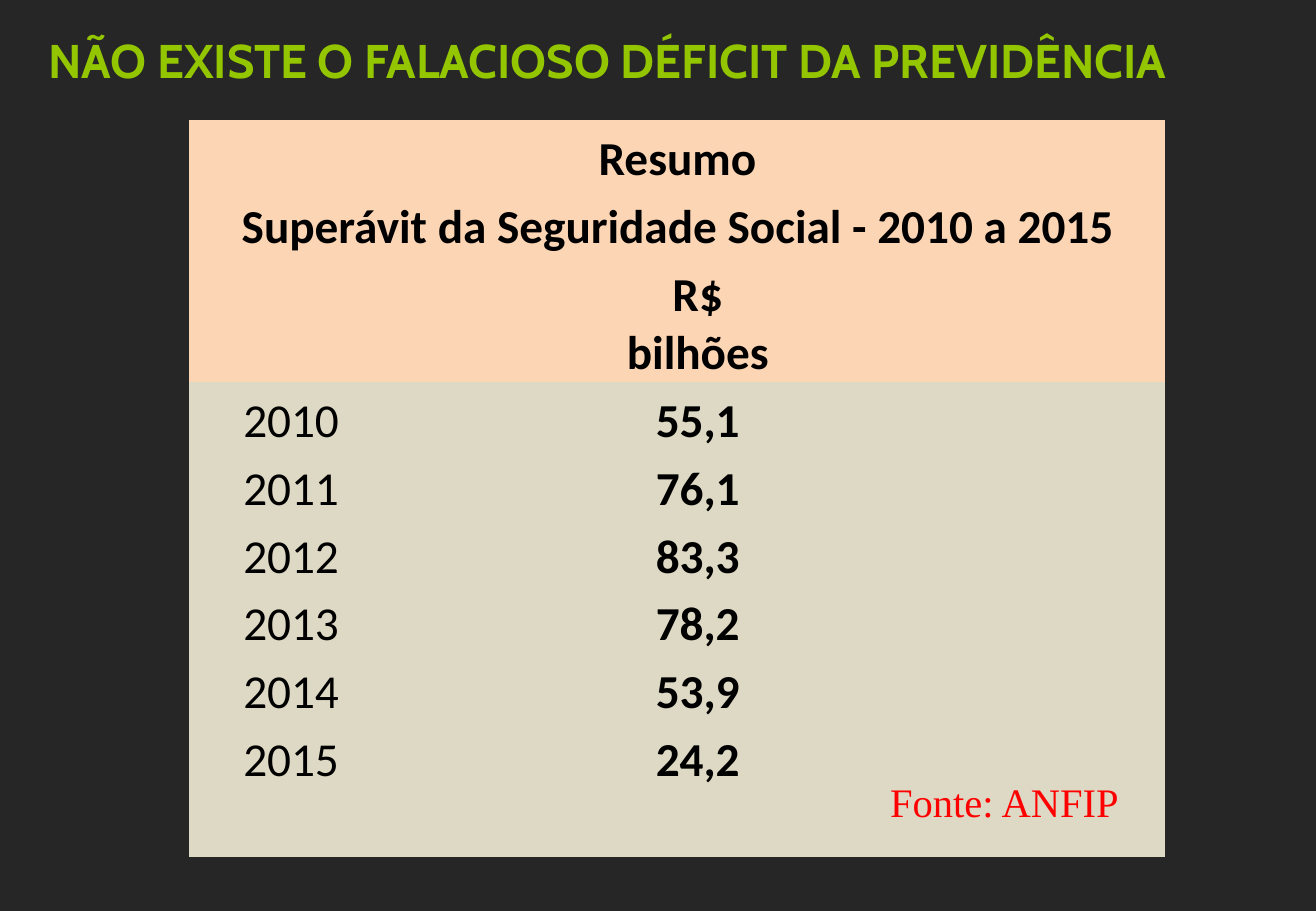
"""Builds the slide on the social security surplus, 2010 to 2015."""
from pptx import Presentation
from pptx import util as u
from pptx.dml.color import RGBColor
from pptx.enum import text

NO_STYLE_NO_GRID = "{2D5ABB26-0587-4C30-8999-92F81FD0307C}"
SURPLUS = {"2010": "55,1", "2011": "76,1", "2012": "83,3",
           "2013": "78,2", "2014": "53,9", "2015": "24,2"}


def color(value):
    return RGBColor.from_string(value)


def write(frame, words, font="Calibri", size=28, ink="000000", bold=True,
          align=text.PP_ALIGN.LEFT):
    para = frame.paragraphs[0]
    para.alignment = align
    span = para.add_run()
    span.text = words
    span.font.name = font
    span.font.size = u.Pt(size)
    span.font.bold = bold
    span.font.color.rgb = color(ink)


deck = Presentation()
deck.slide_width, deck.slide_height = u.Cm(27.51), u.Cm(19.05)
page = deck.slides.add_slide(deck.slide_layouts[5])
page.background.fill.solid()
page.background.fill.fore_color.rgb = color("262626")

title = page.shapes.title
title.left, title.top = u.Cm(0.76), u.Cm(0.53)
title.width, title.height = u.Cm(27.2), u.Cm(1.45)
title.text_frame.vertical_anchor = text.MSO_ANCHOR.TOP
write(title.text_frame, "NÃO EXISTE O FALACIOSO DÉFICIT DA PREVIDÊNCIA",
      font="Cabin", ink="94C600")

rows = [["Resumo"], ["Superávit da Seguridade Social - 2010 a 2015"],
        ["", "", "R$ bilhões"]]
rows += [[year, "", value] for year, value in SURPLUS.items()]
rows.append([])

table_shape = page.shapes.add_table(len(rows), 4, u.Cm(3.96), u.Cm(2.51),
                                    u.Cm(20.4), u.Cm(15.42))
table_shape.element.xpath(".//a:tableStyleId")[0].text = NO_STYLE_NO_GRID
table = table_shape.table
for column, width in zip(table.columns, (4.25, 4.25, 4.25, 7.65)):
    column.width = u.Cm(width)

for i, words in enumerate(rows):
    table.rows[i].height = u.Cm(2.64 if i == 2 else 1.42)
    for j in range(4):
        cell = table.cell(i, j)
        cell.fill.solid()
        cell.fill.fore_color.rgb = color("FCD5B4" if i < 3 else "DDD9C4")
        if j < len(words) and words[j]:
            cell.vertical_anchor = text.MSO_ANCHOR.BOTTOM
            cell.margin_left = cell.margin_right = cell.margin_top = u.Cm(0.03)
            cell.margin_bottom = 0
            write(cell.text_frame, words[j], bold=i < 3 or j == 2,
                  align=text.PP_ALIGN.CENTER)
for i in range(2):
    table.cell(i, 0).merge(table.cell(i, 3))

source_box = page.shapes.add_textbox(u.Cm(18.36), u.Cm(16.13), u.Cm(9.15), u.Cm(1.27))
source_box.text_frame.word_wrap = True
write(source_box.text_frame, "Fonte: ANFIP", font="Times New Roman", size=24,
      ink="FF0000", bold=False)

deck.save("out.pptx")
